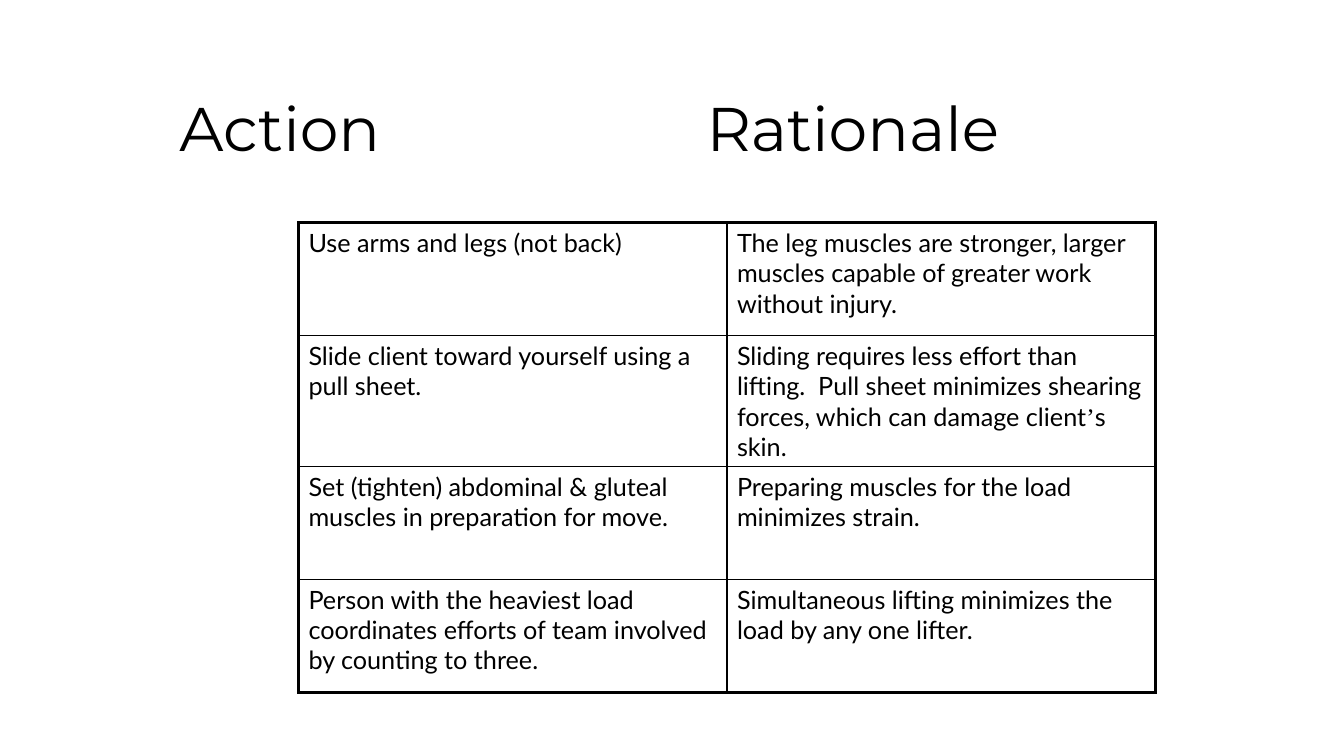
from dataclasses import dataclass

from lxml.etree import SubElement
from pptx import Presentation
from pptx.dml.color import RGBColor
from pptx.enum.text import MSO_VERTICAL_ANCHOR as Anchor
from pptx.oxml.ns import qn
from pptx.slide import Slide
from pptx.table import Table, _Cell as Cell
from pptx.text.text import _Paragraph as Paragraph
from pptx.util import Inches, Pt

BLACK = "000000"
THICK, THIN = 2.25, 1
ROW_HEIGHT, COLUMN_WIDTH = 1.12, 4.25


@dataclass(frozen=True)
class Step:
    action: str
    rationale: str


STEPS = [
    Step("Use arms and legs (not back)",
         "The leg muscles are stronger, larger muscles capable of greater work "
         "without injury."),
    Step("Slide client toward yourself using a pull sheet.",
         "Sliding requires less effort than lifting.  Pull sheet minimizes shearing "
         "forces, which can damage client’s skin."),
    Step("Set (tighten) abdominal & gluteal muscles in preparation for move.",
         "Preparing muscles for the load minimizes strain."),
    Step("Person with the heaviest load coordinates efforts of team involved by "
         "counting to three.",
         "Simultaneous lifting minimizes the load by any one lifter."),
]


def color(value: str) -> RGBColor:
    return RGBColor.from_string(value)


def add_span(para: Paragraph, text: str, font_name: str, size: float) -> None:
    span = para.add_run()
    span.text = text
    for name, value in {"name": font_name, "size": Pt(size)}.items():
        setattr(span.font, name, value)
    span.font.color.rgb = color(BLACK)


def add_headings(page: Slide) -> None:
    """Place both column headings on one line, the second at a tab stop."""
    box = page.shapes.add_textbox(Inches(1.68), Inches(0.68), Inches(11.36), Inches(1.25))
    frame = box.text_frame
    for name, value in {"word_wrap": True, "vertical_anchor": Anchor.MIDDLE}.items():
        setattr(frame, name, value)
    para = frame.paragraphs[0]
    tabs = SubElement(para._p.get_or_add_pPr(), qn("a:tabLst"))
    SubElement(tabs, qn("a:tab"), pos=str(Inches(5.23)), algn="l")
    para.line_spacing = 0.9
    add_span(para, "Action\tRationale", "Montserrat", 44)


def set_borders(cell: Cell, widths: dict[str, float]) -> None:
    properties = cell._tc.get_or_add_tcPr()
    for index, (side, width) in enumerate(widths.items()):
        line = SubElement(properties, qn(f"a:ln{side}"), w=str(Pt(width)))
        fill = SubElement(line, qn("a:solidFill"))
        SubElement(fill, qn("a:srgbClr"), val=BLACK)
        properties.insert(index, line)


def fill_cell(cell: Cell, text: str) -> None:
    """Write the text, with its apostrophe in a serif font."""
    cell.fill.background()
    para = cell.text_frame.paragraphs[0]
    before, apostrophe, after = text.partition("’")
    add_span(para, before, "Lato", 18)
    if apostrophe:
        add_span(para, apostrophe, "Times New Roman", 18)
        add_span(para, after, "Lato", 18)


def add_steps(page: Slide) -> None:
    count = len(STEPS)
    table: Table = page.shapes.add_table(
        count, 2, Inches(2.96), Inches(2.21),
        Inches(2 * COLUMN_WIDTH), Inches(count * ROW_HEIGHT)).table
    for name in ("first_row", "horz_banding"):
        setattr(table, name, False)
    for column in table.columns:
        column.width = Inches(COLUMN_WIDTH)
    for row, step in enumerate(STEPS):
        table.rows[row].height = Inches(ROW_HEIGHT)
        for column, text in enumerate((step.action, step.rationale)):
            cell = table.cell(row, column)
            fill_cell(cell, text)
            outer = {"L": column == 0, "R": column == 1,
                     "T": row == 0, "B": row == count - 1}
            set_borders(cell, {side: THICK if edge else THIN
                               for side, edge in outer.items()})


def main() -> None:
    deck = Presentation()
    deck.slide_width, deck.slide_height = Inches(13.33), Inches(7.5)
    page = deck.slides.add_slide(deck.slide_layouts[6])
    add_headings(page)
    add_steps(page)
    deck.save("out.pptx")


if __name__ == "__main__":
    main()
